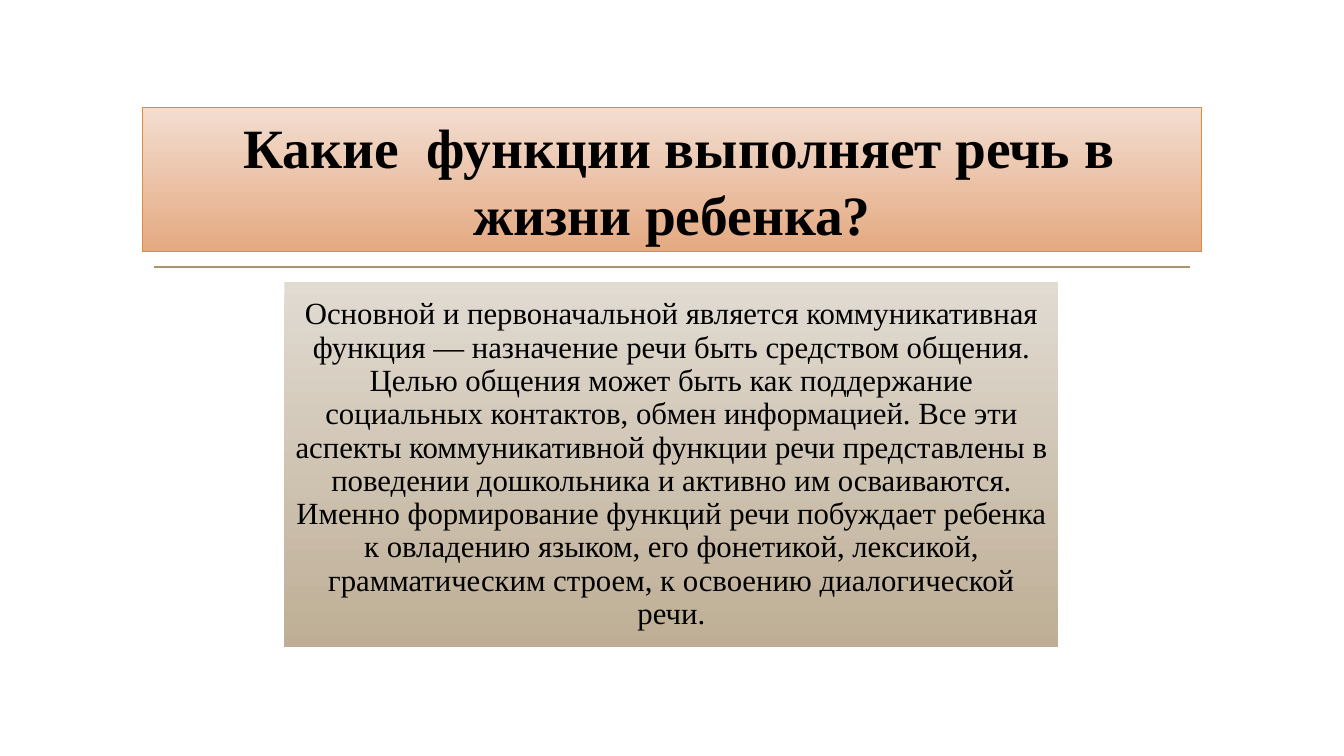
from pptx import Presentation
from pptx.dml.color import RGBColor as Rgb
from pptx.enum.shapes import MSO_CONNECTOR as Connector, MSO_SHAPE as Shape
from pptx.enum.text import MSO_ANCHOR as Anchor, PP_ALIGN as Align
from pptx.oxml.ns import qn
from pptx.util import Cm, Pt

COLOURS = {
    "text": "000000",
    "rule": "AB946B",
    "title_top": "F3DDD0",
    "title_bottom": "E4A981",
    "title_border": "DD8C3C",
    "body_top": "E1DBD2",
    "body_bottom": "BEAE95",
}
TITLE = " Какие  функции выполняет речь в жизни ребенка?"
BODY = (
    "Основной и первоначальной является коммуникативная функция — назначение "
    "речи быть средством общения. Целью общения может быть как поддержание "
    "социальных контактов, обмен информацией. Все эти аспекты коммуникативной "
    "функции речи представлены в поведении дошкольника и активно им осваиваются. "
    "Именно формирование функций речи побуждает ребенка к овладению языком, его "
    "фонетикой, лексикой, грамматическим строем, к освоению диалогической речи."
)


def colour(name):
    """Return the named colour."""
    return Rgb.from_string(COLOURS[name])


def add_rule(page, left, right, top):
    """Draw the thin horizontal rule under the title."""
    rule = page.shapes.add_connector(Connector.STRAIGHT, left, top, right, top)
    rule.line.color.rgb = colour("rule")
    rule.line.width = Pt(1.25)
    properties = rule._element.spPr
    properties.append(properties.makeelement(qn("a:effectLst"), {}))


def add_panel(page, name, left, top, width, height):
    """Add a borderless rectangle shaded from top to bottom."""
    panel = page.shapes.add_shape(Shape.RECTANGLE, left, top, width, height)
    panel.shadow.inherit = False
    panel.fill.gradient()
    panel.fill.gradient_angle = 270
    for stop, end in zip(panel.fill.gradient_stops, ("top", "bottom")):
        stop.color.rgb = colour(f"{name}_{end}")
        stop.position = 0 if end == "top" else 1
    panel.line.fill.background()
    return panel


def write_text(panel, text, size, bold=False, spacing=1.0):
    """Write one centred paragraph into a panel."""
    frame = panel.text_frame
    frame.word_wrap = True
    frame.vertical_anchor = Anchor.MIDDLE
    para = frame.paragraphs[0]
    para.text = text
    para.alignment = Align.CENTER
    para.line_spacing = spacing
    para.font.name = "Times New Roman"
    para.font.size = Pt(size)
    para.font.bold = bold
    para.font.color.rgb = colour("text")


def main():
    """Build and save the slide."""
    deck = Presentation()
    deck.slide_width, deck.slide_height = Cm(33.87), Cm(19.05)
    page = deck.slides.add_slide(deck.slide_layouts[6])

    add_rule(page, Cm(3.89), Cm(30), Cm(6.73))

    title = add_panel(page, "title", Cm(3.6), Cm(2.72), Cm(26.67), Cm(3.63))
    title.line.color.rgb = colour("title_border")
    title.line.width = Pt(0.75)
    write_text(title, TITLE, 39.6, bold=True)

    body = add_panel(page, "body", Cm(7.17), Cm(7.11), Cm(19.5), Cm(9.2))
    body.text_frame.margin_left = body.text_frame.margin_right = Cm(0.23)
    write_text(body, BODY, 22, spacing=0.9)

    deck.save("out.pptx")


if __name__ == "__main__":
    main()
